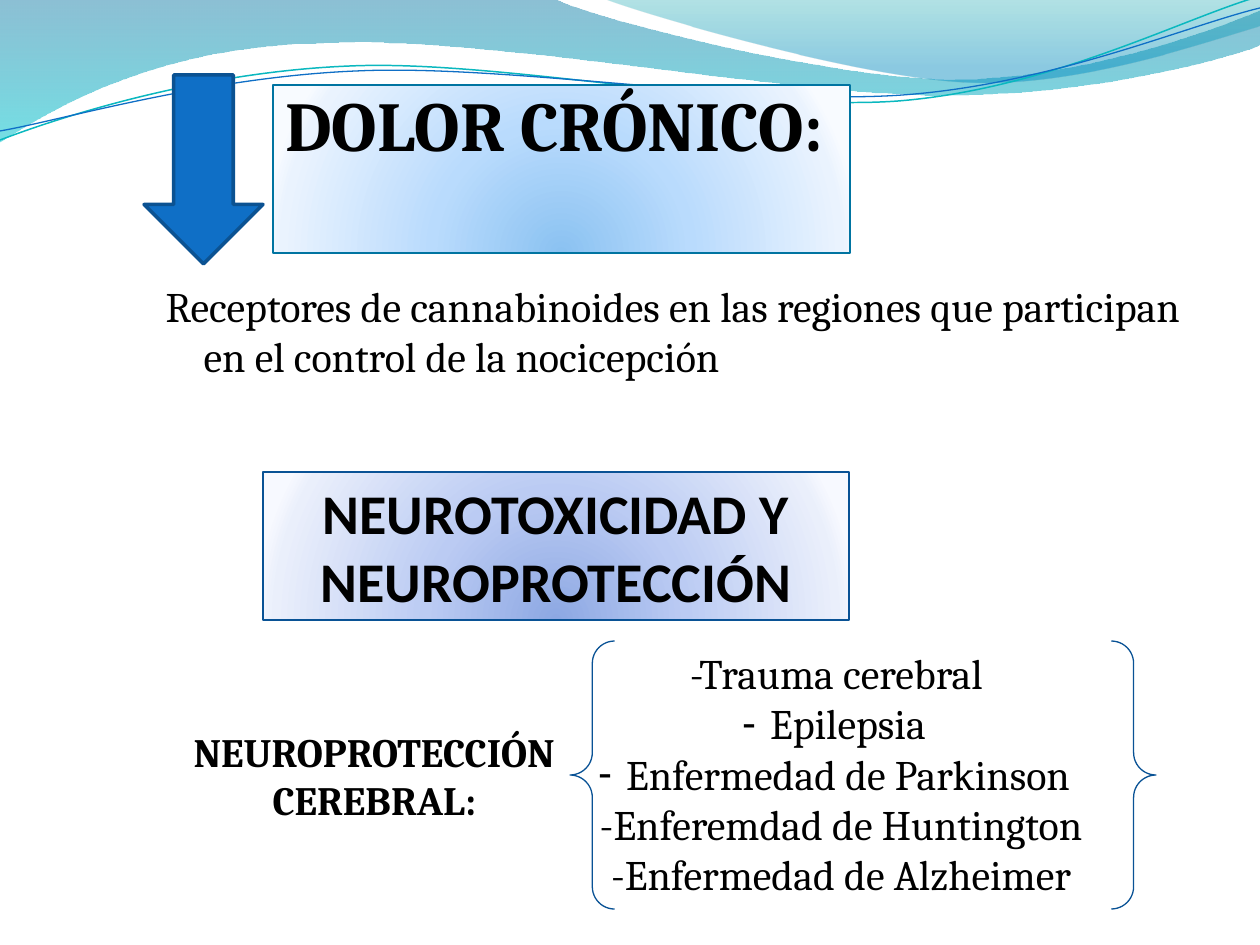
import pptx
import pptx.util
import pptx.dml.color
import pptx.enum.shapes
import pptx.enum.text
import pptx.oxml
import pptx.oxml.ns

SCALE = 914400 / 126
COLORS = {
    "black": "000000", "arrow": "0F6FC6", "arrow_edge": "0B5292",
    "edge": "095295", "pain_edge": "0074A1", "wave_line": "0AB8BF",
}
PAIN_STOPS = [(0, "8BC2F1", 100), (43, "B9DBFD", 100), (93, "EAF3FE", 100), (100, "F8FBFF", 100)]
TOXIC_STOPS = [(0, "8DA8E3", 100), (43, "BBCBF3", 100), (93, "EAEFFB", 100), (100, "F7F9FF", 100)]
LINEAR = '<a:lin ang="5400000" scaled="1"/>'
RADIAL = '<a:path path="circle"><a:fillToRect l="50000" t="130000" r="50000" b="-30000"/></a:path>'
WAVES = [
    ([(0, 0), (554, -1), (600, 21, 837, 79, 955, 79), (1075, 79, 1207, 33, 1260, 11),
      (1261, 45), (1239, 55, 1096, 96, 940, 95), (784, 95, 481, 35, 324, 43),
      (163, 45, 58, 105, -1, 142)],
     [(0, "0074A1", 45), (100, "00C6CF", 55)]),
    ([(604, -1), (641, 14, 859, 78, 969, 82), (1079, 87, 1211, 40, 1260, 26), (1260, 0)],
     [(0, "00A1A9", 30), (80, "008BBF", 45)]),
]
STRANDS = [
    ([(0, 140), (60, 117, 199, 72, 349, 66), (498, 59, 747, 112, 898, 101),
      (1049, 89, 1182, 19, 1257, -3)], "wave_line", 0.85),
    ([(0, 131), (59, 121, 207, 77, 357, 71), (508, 64, 752, 106, 903, 95),
      (1053, 84, 1186, 26, 1260, 8)], "arrow", 0.75),
]
DISEASES = [
    ("-Trauma cerebral ", False), ("Epilepsia", True), ("Enfermedad de Parkinson", True),
    ("-Enferemdad de Huntington", False), ("-Enfermedad de Alzheimer", False),
]
ALIGN = pptx.enum.text.PP_ALIGN
ANCHOR = pptx.enum.text.MSO_ANCHOR
SHAPE = pptx.enum.shapes.MSO_SHAPE


def px(length):
    return round(length * SCALE)


def rgb(name):
    return pptx.dml.color.RGBColor.from_string(COLORS[name])


def set_values(target, values):
    for name, value in values.items():
        setattr(target, name, value)


def place(shape, left, top, width, height):
    set_values(shape, {"left": px(left), "top": px(top), "width": px(width), "height": px(height)})


def make_xml(tag, attributes="", content=""):
    space = pptx.oxml.ns.nsdecls("a")
    return pptx.oxml.parse_xml(f"<a:{tag} {space} {attributes}>{content}</a:{tag}>")


def paint_gradient(shape, stops, direction):
    marks = "".join(
        f'<a:gs pos="{position * 1000}"><a:srgbClr val="{color}">'
        f'<a:alpha val="{alpha * 1000}"/></a:srgbClr></a:gs>'
        for position, color, alpha in stops)
    shape.fill.background()
    blank = shape._element.spPr.find(pptx.oxml.ns.qn("a:noFill"))
    blank.getparent().replace(blank, make_xml(
        "gradFill", 'rotWithShape="1"', f"<a:gsLst>{marks}</a:gsLst>{direction}"))


def set_line(shape, color, width):
    shape.line.color.rgb = rgb(color)
    shape.line.width = pptx.util.Pt(width)


def add_outline(page, moves, close):
    anchors = [move[-2:] for move in moves]
    left = min(x for x, y in anchors)
    top = min(y for x, y in anchors)
    builder = page.shapes.build_freeform(*anchors[0], scale=SCALE)
    builder.add_line_segments(anchors[1:], close=close)
    shape = builder.convert_to_shape()
    shape.shadow.inherit = False
    segments = list(shape._element.iter(pptx.oxml.ns.qn("a:lnTo")))
    for segment, move in zip(segments, moves[1:]):
        if len(move) == 6:
            points = "".join(f'<a:pt x="{x - left}" y="{y - top}"/>'
                             for x, y in zip(move[::2], move[1::2]))
            segment.getparent().replace(segment, make_xml("cubicBezTo", content=points))
    return shape


def add_waves(page):
    for moves, stops in WAVES:
        wave = add_outline(page, moves, True)
        paint_gradient(wave, stops, LINEAR)
        wave.line.fill.background()
    for moves, color, width in STRANDS:
        strand = add_outline(page, moves, False)
        strand.fill.background()
        set_line(strand, color, width)


def add_preset(page, kind, *bounds):
    shape = page.shapes.add_shape(kind, *map(px, bounds))
    shape.shadow.inherit = False
    return shape


def set_frame(box, anchor):
    set_values(box.text_frame, {
        "word_wrap": True, "vertical_anchor": anchor,
        "auto_size": pptx.enum.text.MSO_AUTO_SIZE.NONE})


def write(para, text, size, font="Cambria", bold=False, **layout):
    set_values(para, layout)
    span = para.add_run()
    span.text = text
    set_values(span.font, {"name": font, "size": pptx.util.Pt(size), "bold": bold})
    span.font.color.rgb = rgb("black")


def set_bullet(para, dash, margin=0, indent=0):
    properties = para._p.get_or_add_pPr()
    properties.set("marL", str(px(margin)))
    properties.set("indent", str(px(indent)))
    if dash:
        properties.append(make_xml("buFontTx"))
        properties.append(make_xml("buChar", 'char="-"'))
    else:
        properties.append(make_xml("buNone"))


def decorate_panel(panel, stops, edge):
    paint_gradient(panel, stops, RADIAL)
    set_line(panel, edge, 0.75)


def add_title(title):
    place(title, 273, 85, 577, 168)
    decorate_panel(title, PAIN_STOPS, "pain_edge")
    set_frame(title, ANCHOR.TOP)
    write(title.text_frame.paragraphs[0], "DOLOR CRÓNICO:", 40, bold=True,
          alignment=ALIGN.LEFT, line_spacing=0.9)


def add_receptors(body):
    place(body, 153, 274, 1042, 129)
    set_frame(body, ANCHOR.TOP)
    para = body.text_frame.paragraphs[0]
    write(para, "Receptores de cannabinoides en las regiones que participan "
          "en el control de la nocicepción", 24, space_before=pptx.util.Pt(6))
    set_bullet(para, False, 38, -38)


def add_diseases(body):
    place(body, 541, 641, 600, 267)
    set_frame(body, ANCHOR.TOP)
    frame = body.text_frame
    for index, (text, dash) in enumerate(DISEASES):
        para = frame.add_paragraph() if index else frame.paragraphs[0]
        write(para, text, 24, alignment=ALIGN.CENTER, space_before=pptx.util.Pt(0))
        set_bullet(para, dash, *((13, -28) if dash else ()))


def add_toxicity(page):
    panel = add_preset(page, SHAPE.RECTANGLE, 263, 472, 586, 148)
    decorate_panel(panel, TOXIC_STOPS, "edge")
    set_frame(panel, ANCHOR.MIDDLE)
    write(panel.text_frame.paragraphs[0], "NEUROTOXICIDAD Y NEUROPROTECCIÓN", 32,
          font="Calibri", bold=True, alignment=ALIGN.CENTER)


def add_protection(page):
    box = page.shapes.add_textbox(*map(px, (104, 721, 541, 111)))
    set_frame(box, ANCHOR.TOP)
    write(box.text_frame.paragraphs[0], "NEUROPROTECCIÓN CEREBRAL:", 23,
          bold=True, alignment=ALIGN.CENTER)


def main():
    deck = pptx.Presentation()
    set_values(deck, {"slide_width": px(1260), "slide_height": px(945)})
    page = deck.slides.add_slide(deck.slide_layouts[3])
    title, receptors, diseases = page.placeholders
    add_waves(page)
    for holder in (title, receptors, diseases):
        page.shapes._spTree.append(holder._element)
    add_title(title)
    add_receptors(receptors)
    add_toxicity(page)
    page.shapes._spTree.append(diseases._element)
    add_diseases(diseases)
    arrow = add_preset(page, SHAPE.DOWN_ARROW, 144, 75, 119, 189)
    arrow.fill.solid()
    arrow.fill.fore_color.rgb = rgb("arrow")
    set_line(arrow, "arrow_edge", 2)
    add_protection(page)
    brace = add_preset(page, SHAPE.DOUBLE_BRACE, 570, 641, 586, 268)
    brace.fill.background()
    set_line(brace, "edge", 0.75)
    deck.save("out.pptx")


if __name__ == "__main__":
    main()
